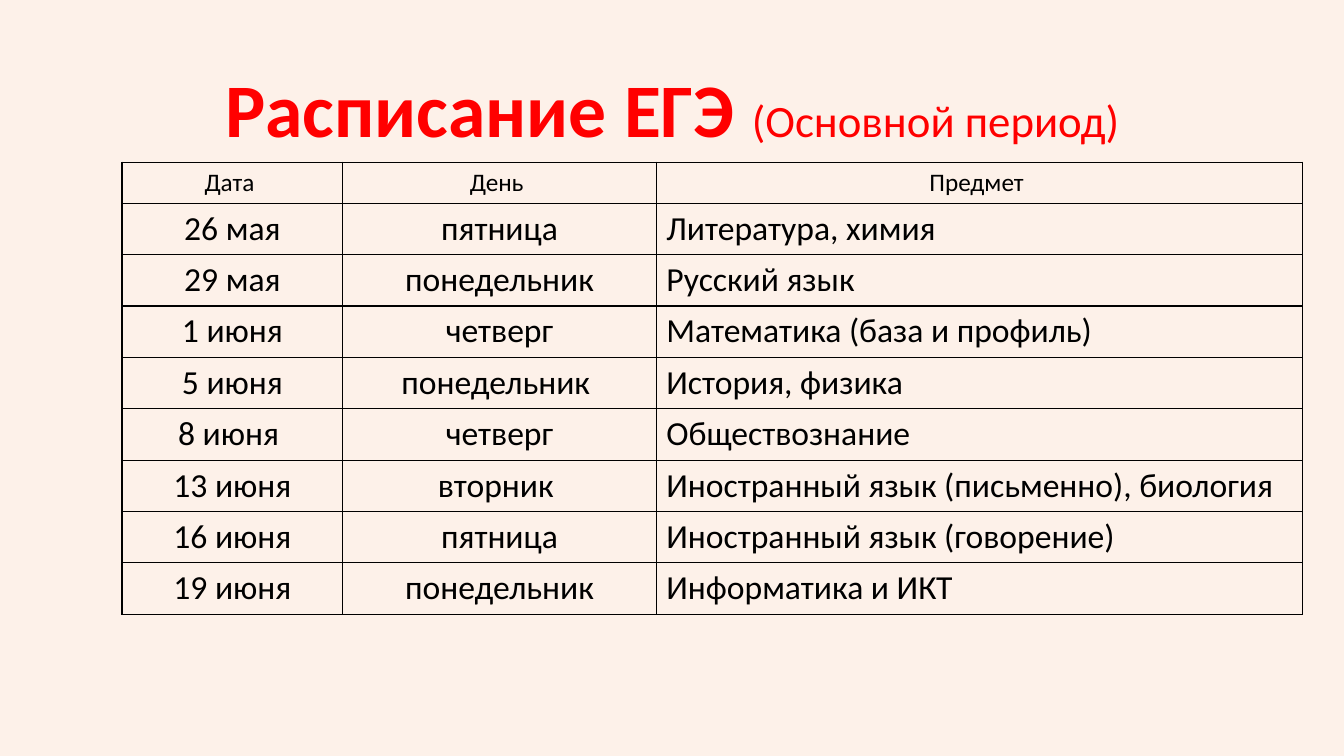
from dataclasses import dataclass

from pptx import Presentation
from pptx.dml.color import RGBColor
from pptx.enum.text import MSO_ANCHOR, PP_ALIGN
from pptx.oxml import parse_xml
from pptx.oxml.ns import nsdecls
from pptx.util import Inches, Pt


@dataclass(frozen=True)
class Theme:
    font: str = "Calibri"
    background: str = "FDF1E9"
    accent: str = "FF0000"
    ink: str = "000000"
    title_size: int = 54
    subtitle_size: int = 32
    header_size: int = 18
    body_size: int = 24
    border_width: int = 1


THEME = Theme()
COLUMN_WIDTHS = (2.19, 3.11, 6.41)
HEADER_HEIGHT = 0.4
ROW_HEIGHT = 0.51
SCHEDULE = (
    ("Дата ", "День ", "Предмет "),
    ("26 мая", "пятница", "Литература, химия"),
    ("29 мая", "понедельник", "Русский язык"),
    ("1 июня", "четверг", "Математика (база и профиль)"),
    ("5 июня", "понедельник ", "История, физика"),
    ("8 июня ", "четверг", "Обществознание"),
    ("13 июня", "вторник ", "Иностранный язык (письменно), биология"),
    ("16 июня", "пятница", "Иностранный язык (говорение)"),
    ("19 июня", "понедельник", "Информатика и ИКТ"),
)


def add_span(para, text, size, color, bold=False):
    span = para.add_run()
    span.text = text
    formats = {"name": THEME.font, "size": Pt(size), "bold": bold}
    for name, value in formats.items():
        setattr(span.font, name, value)
    span.font.color.rgb = RGBColor.from_string(color)


def set_background(page):
    fill = page.background.fill
    fill.solid()
    fill.fore_color.rgb = RGBColor.from_string(THEME.background)


def fill_title(page):
    title = page.shapes.title
    place = {"left": 0.92, "top": 0.4, "width": 11.5, "height": 1.45}
    for name, value in place.items():
        setattr(title, name, Inches(value))
    frame = title.text_frame
    frame.word_wrap = True
    frame.vertical_anchor = MSO_ANCHOR.MIDDLE
    para = frame.paragraphs[0]
    para.alignment = PP_ALIGN.CENTER
    para.line_spacing = 0.9
    add_span(para, "Расписание ЕГЭ ", THEME.title_size, THEME.accent, True)
    add_span(para, "(Основной период)", THEME.subtitle_size, THEME.accent)


def add_borders(cell):
    properties = cell._tc.get_or_add_tcPr()
    for side in ("lnL", "lnR", "lnT", "lnB"):
        properties.append(parse_xml(
            f'<a:{side} {nsdecls("a")} w="{Pt(THEME.border_width)}">'
            f'<a:solidFill><a:srgbClr val="{THEME.ink}"/></a:solidFill></a:{side}>'
        ))


def fill_cell(cell, text, size, alignment):
    add_borders(cell)
    cell.fill.background()
    para = cell.text_frame.paragraphs[0]
    para.alignment = alignment
    add_span(para, text, size, THEME.ink)


def add_schedule(page):
    heights = [HEADER_HEIGHT] + [ROW_HEIGHT] * (len(SCHEDULE) - 1)
    table = page.shapes.add_table(
        len(SCHEDULE), len(COLUMN_WIDTHS), Inches(1.21), Inches(1.61),
        Inches(sum(COLUMN_WIDTHS)), Inches(sum(heights)),
    ).table
    table.first_row = False
    table.horz_banding = False
    for column, width in zip(table.columns, COLUMN_WIDTHS):
        column.width = Inches(width)
    for row_index, (row, height, texts) in enumerate(zip(table.rows, heights, SCHEDULE)):
        row.height = Inches(height)
        is_header = row_index == 0
        size = THEME.header_size if is_header else THEME.body_size
        for column_index, (cell, text) in enumerate(zip(row.cells, texts)):
            centered = is_header or column_index < 2
            fill_cell(cell, text, size, PP_ALIGN.CENTER if centered else PP_ALIGN.LEFT)


def main():
    deck = Presentation()
    deck.slide_width = Inches(13.33)
    deck.slide_height = Inches(7.5)
    page = deck.slides.add_slide(deck.slide_layouts.get_by_name("Title Only"))
    set_background(page)
    fill_title(page)
    add_schedule(page)
    deck.save("out.pptx")


if __name__ == "__main__":
    main()
